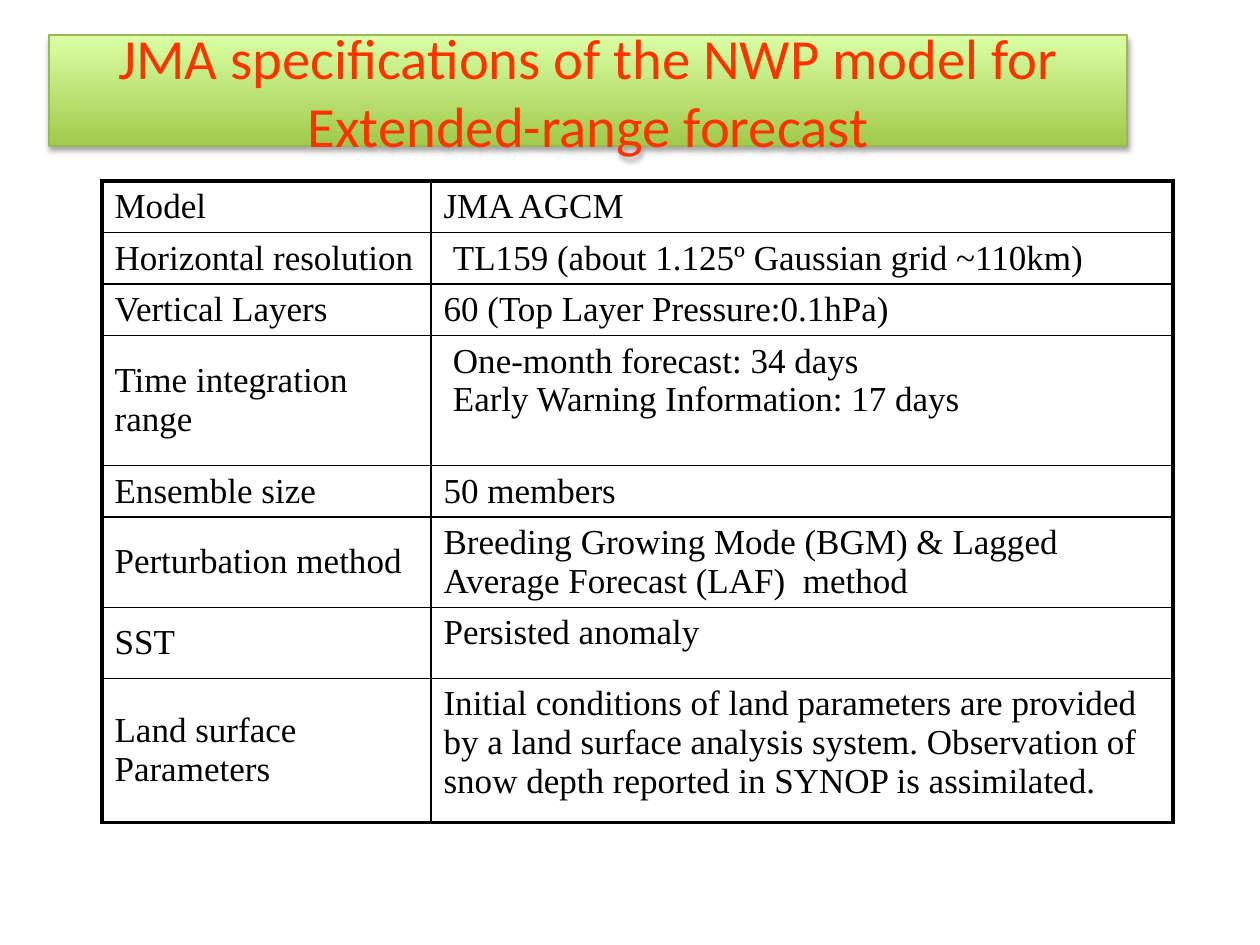
from lxml import etree
from pptx import Presentation
from pptx.dml.color import RGBColor
from pptx.enum.shapes import MSO_SHAPE
from pptx.enum.text import MSO_ANCHOR, PP_ALIGN
from pptx.oxml.ns import qn
from pptx.util import Emu, Pt

RECTANGLE = MSO_SHAPE.RECTANGLE
TOP, MIDDLE = MSO_ANCHOR.TOP, MSO_ANCHOR.MIDDLE
LEFT, CENTER = PP_ALIGN.LEFT, PP_ALIGN.CENTER

BLACK = RGBColor(0x00, 0x00, 0x00)
TITLE_RED = RGBColor(0xFF, 0x33, 0x00)
BANNER_DARK = RGBColor(0xA0, 0xCA, 0x4A)
BANNER_LIGHT = RGBColor(0xDA, 0xFF, 0xA5)
BANNER_EDGE = RGBColor(0x98, 0xB9, 0x55)

PX_PER_INCH = 126
OUTER_PT, INNER_PT = 2.25, 1
CELL_INDENT = 22

TITLE = "JMA specifications of the NWP model for Extended-range forecast"
COLUMN_WIDTHS = [329, 742]

# Row height, property, lines of its value, whether the value is indented
SPECIFICATIONS = [
    (51, "Model", ["JMA AGCM"], False),
    (51, "Horizontal resolution",
     ["TL159 (about 1.125º Gaussian grid ~110km)"], True),
    (51, "Vertical Layers", ["60 (Top Layer Pressure:0.1hPa)"], False),
    (130, "Time integration range",
     ["One-month forecast: 34 days",
      "Early Warning Information: 17 days"], True),
    (51, "Ensemble size", ["50 members"], False),
    (90, "Perturbation method",
     ["Breeding Growing Mode (BGM) & Lagged Average Forecast (LAF)  method"],
     False),
    (71, "SST", ["Persisted anomaly"], False),
    (144, "Land surface Parameters",
     ["Initial conditions of land parameters are provided by a land surface "
      "analysis system. Observation of snow depth reported in SYNOP is "
      "assimilated."], False),
]


def px(length):
    return Emu(round(length * 914400 / PX_PER_INCH))


def write_text(frame, lines, *, font="Times New Roman", size=20, color=BLACK,
               align=LEFT):
    frame.word_wrap = True
    for index, line in enumerate(lines):
        paragraph = frame.paragraphs[0] if index == 0 else frame.add_paragraph()
        paragraph.alignment = align
        run = paragraph.add_run()
        run.text = line
        run.font.name = font
        run.font.size = Pt(size)
        run.font.color.rgb = color


def add_shadow(shape, *, blur, distance, direction, opacity):
    shape.shadow.inherit = False
    effects = shape._element.spPr.find(qn("a:effectLst"))
    shadow = etree.SubElement(
        effects, qn("a:outerShdw"), blurRad=str(Pt(blur)),
        dist=str(Pt(distance)), dir=str(direction * 60000), rotWithShape="0")
    color = etree.SubElement(shadow, qn("a:srgbClr"), val=str(BLACK))
    etree.SubElement(color, qn("a:alpha"), val=str(opacity * 1000))


def add_banner(slide, text, left, top, width, height):
    banner = slide.shapes.add_shape(
        RECTANGLE, px(left), px(top), px(width), px(height))
    banner.fill.gradient()
    banner.fill.gradient_angle = 90
    stops = zip(banner.fill.gradient_stops, (BANNER_DARK, BANNER_LIGHT))
    for position, (stop, color) in enumerate(stops):
        stop.position = position
        stop.color.rgb = color
    banner.line.color.rgb = BANNER_EDGE
    banner.line.width = Pt(0.75)
    add_shadow(banner, blur=3.1, distance=1.8, direction=90, opacity=35)
    banner.text_frame.vertical_anchor = MIDDLE
    write_text(banner.text_frame, [text], font="Calibri", size=32.4,
               color=TITLE_RED, align=CENTER)


def set_borders(cell, widths):
    properties = cell._tc.get_or_add_tcPr()
    for index, (side, width) in enumerate(widths.items()):
        border = etree.Element(qn(f"a:ln{side}"), w=str(Pt(width)))
        fill = etree.SubElement(border, qn("a:solidFill"))
        etree.SubElement(fill, qn("a:srgbClr"), val=str(BLACK))
        properties.insert(index, border)


def fill_cell(cell, lines, anchor, borders):
    cell.fill.background()
    cell.vertical_anchor = anchor
    write_text(cell.text_frame, lines)
    set_borders(cell, borders)


def add_specification_table(slide, left, top):
    heights = [row[0] for row in SPECIFICATIONS]
    table = slide.shapes.add_table(
        len(heights), len(COLUMN_WIDTHS), px(left), px(top),
        px(sum(COLUMN_WIDTHS)), px(sum(heights))).table
    table.first_row = False
    table.horz_banding = False
    for column, width in zip(table.columns, COLUMN_WIDTHS):
        column.width = px(width)

    last = len(heights) - 1
    for index, (height, name, value, indented) in enumerate(SPECIFICATIONS):
        table.rows[index].height = px(height)
        name_cell, value_cell = table.cell(index, 0), table.cell(index, 1)
        # Heavy frame outside, thin rules inside
        edges = {"T": OUTER_PT if index == 0 else INNER_PT,
                 "B": OUTER_PT if index == last else INNER_PT}
        fill_cell(name_cell, [name], MIDDLE,
                  {"L": OUTER_PT, "R": INNER_PT, **edges})
        fill_cell(value_cell, value, TOP,
                  {"L": INNER_PT, "R": OUTER_PT, **edges})
        if indented:
            value_cell.margin_left = px(CELL_INDENT)


def main():
    presentation = Presentation()
    presentation.slide_width = px(1260)
    presentation.slide_height = px(945)
    slide = presentation.slides.add_slide(presentation.slide_layouts[6])

    # Title banner
    add_banner(slide, TITLE, 49, 35, 1078, 111)

    # Model specifications
    add_specification_table(slide, 102, 181)

    presentation.save("out.pptx")


if __name__ == "__main__":
    main()
